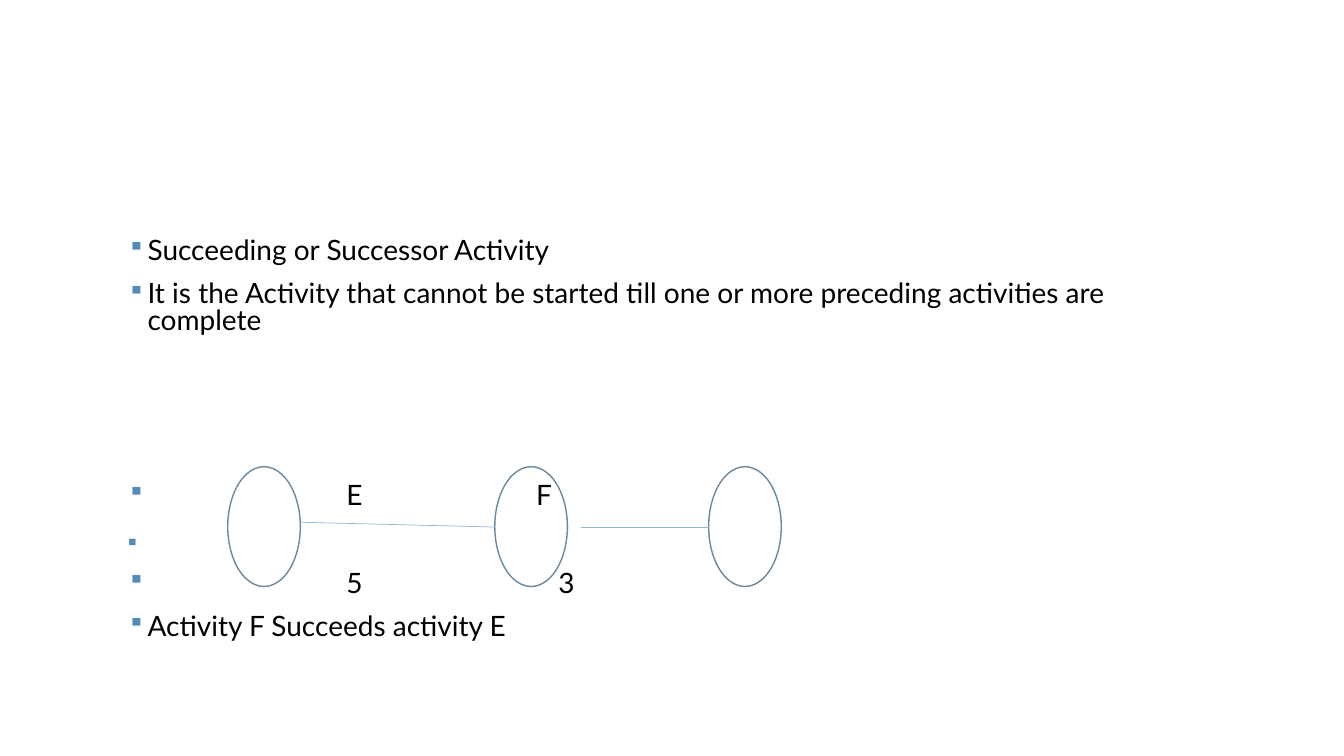
from dataclasses import dataclass

from lxml import etree
from pptx import Presentation
from pptx import util as u
from pptx.dml import color
from pptx.enum import shapes, text
from pptx.oxml import ns


@dataclass
class Theme:
    font: str = "Lato"
    size: float = 20
    mark: float = 17
    ink: str = "000000"
    dot: str = "558BB8"
    ring: str = "6D879B"
    link: str = "94B6D2"


def put(item, **style):
    for key, value in style.items():
        setattr(item, key, value)


def tint(code):
    return color.RGBColor.from_string(code)


def add(node, tag, **attrs):
    return etree.SubElement(node, ns.qn(tag), attrs)


class Page:
    def __init__(self, deck, theme):
        self.theme = theme
        self.slide = deck.slides.add_slide(deck.slide_layouts[6])

    def body(self, left, top, width, height, rows):
        box = self.slide.shapes.add_textbox(*map(u.Cm, (left, top, width, height)))
        frame = box.text_frame
        put(frame, word_wrap=True, vertical_anchor=text.MSO_ANCHOR.TOP)
        for num, row in enumerate(rows):
            para = frame.add_paragraph() if num else frame.paragraphs[0]
            self.row(para, **row)

    def row(self, para, words, gap=12, tabs=(), bare=False):
        put(para, line_spacing=0.8, space_before=u.Pt(gap))
        props = para._p.get_or_add_pPr()
        if not bare:
            props.set("marL", str(u.Cm(0.5)))
            props.set("indent", str(-u.Cm(0.5)))
            tone = add(props, "a:buClr")
            add(tone, "a:srgbClr", val=self.theme.dot)
            add(props, "a:buSzPct", val="85000")
            add(props, "a:buChar", char="▪")
        if tabs:
            stops = add(props, "a:tabLst")
            for pos in tabs:
                add(stops, "a:tab", pos=str(u.Cm(pos)), algn="l")
        run = para.add_run()
        run.text = words
        size = self.theme.mark if bare else self.theme.size
        put(run.font, name=self.theme.font, size=u.Pt(size))
        run.font.color.rgb = tint(self.theme.dot if bare else self.theme.ink)

    def ring(self, left, top, width, height):
        node = self.slide.shapes.add_shape(
            shapes.MSO_SHAPE.OVAL, *map(u.Cm, (left, top, width, height)))
        node.shadow.inherit = False
        node.fill.background()
        node.line.color.rgb = tint(self.theme.ring)
        node.line.width = u.Pt(1)

    def link(self, *ends):
        line = self.slide.shapes.add_connector(
            shapes.MSO_CONNECTOR.STRAIGHT, *map(u.Cm, ends))
        line.line.color.rgb = tint(self.theme.link)
        line.line.width = u.Pt(0.5)
        add(line._element.spPr, "a:effectLst")


def main():
    deck = Presentation()
    put(deck, slide_width=u.Cm(33.87), slide_height=u.Cm(19.05))
    page = Page(deck, Theme())
    page.body(2.97, 5.89, 27.94, 11.25, [
        dict(words="Succeeding or Successor Activity", gap=0),
        dict(words="It is the Activity that cannot be started till one or more "
                   "preceding activities are complete"),
        dict(words="\tE\tF", gap=105.6, tabs=(5.51, 10.29)),
        dict(words="▪", gap=15, bare=True),
        dict(words="\t5\t3", tabs=(5.51, 10.85)),
        dict(words="Activity F Succeeds activity E"),
    ])
    for left in (5.74, 12.47, 17.86):
        page.ring(left, 11.76, 1.83, 3.02)
    page.link(7.57, 13.16, 12.47, 13.28)
    page.link(14.63, 13.28, 17.86, 13.28)
    deck.save("out.pptx")


if __name__ == "__main__":
    main()
